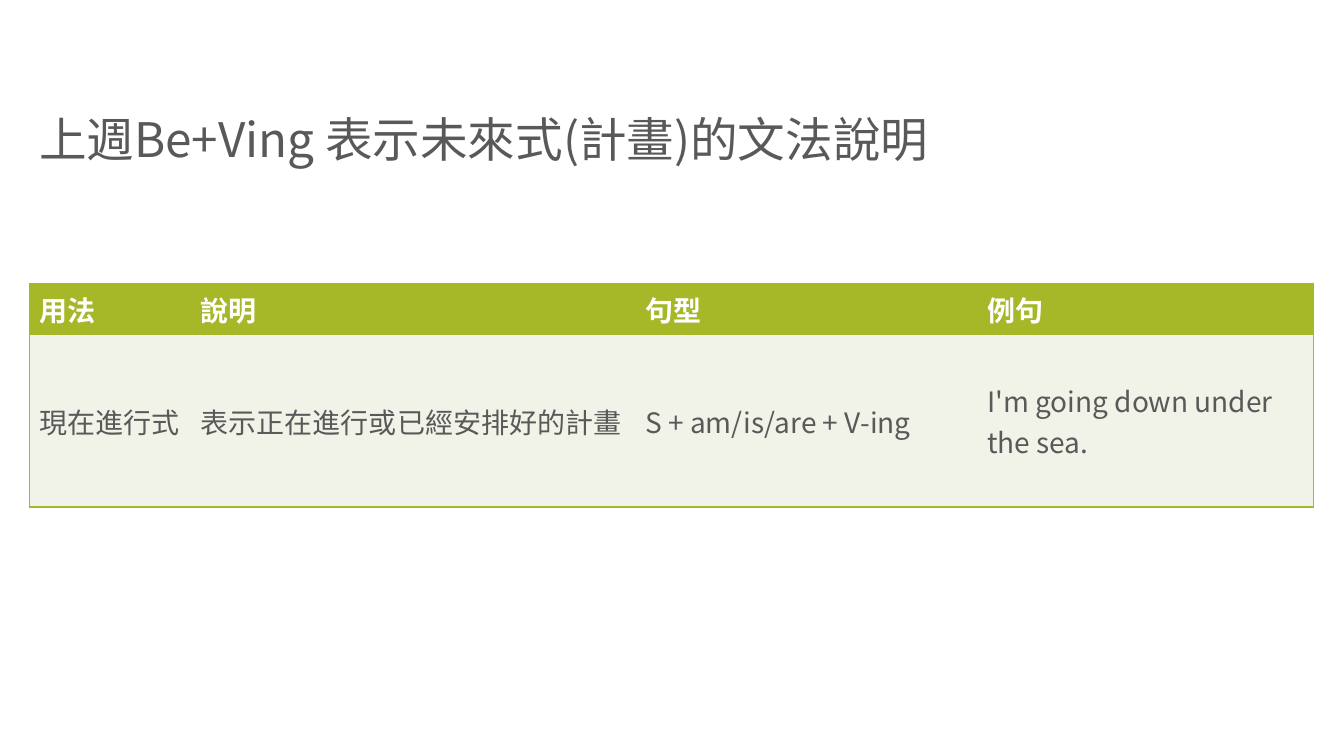
import pptx
import pptx.dml.color
import pptx.enum.text
import pptx.oxml
import pptx.oxml.ns
import pptx.util
from pptx.util import Inches

TITLE = "上週Be+Ving 表示未來式(計畫)的文法說明"
ROWS = [
    ["用法", "說明", "句型", "例句"],
    ["現在進行式", "表示正在進行或已經安排好的計畫", "S + am/is/are + V-ing", "I'm going down under the sea."],
]
COLUMN_WIDTHS = [1.6, 4.41, 3.39, 3.34]
ROW_HEIGHTS = [0.51, 1.71]
LEFT = 0.29
TABLE_TOP = 2.81
FONT = "Noto Sans CJK SC"
COLORS = {"green": "A6B727", "pale": "F1F3E8", "gray": "595959", "white": "FFFFFF"}


def color(name):
    return pptx.dml.color.RGBColor.from_string(COLORS[name])


def add_text(paragraph, text, size, color_name, bold=False):
    run = paragraph.add_run()
    run.text = text
    run.font.name = FONT
    run.font.size = pptx.util.Pt(size)
    run.font.bold = bold
    run.font.color.rgb = color(color_name)
    east_asian = pptx.oxml.parse_xml(f'<a:ea {pptx.oxml.ns.nsdecls("a")} typeface="{FONT}"/>')
    run.font._element.find(pptx.oxml.ns.qn("a:latin")).addnext(east_asian)


def set_borders(cell, visible_sides):
    properties = cell._tc.get_or_add_tcPr()
    for position, side in enumerate("LRTB"):
        if side in visible_sides:
            paint = f'<a:solidFill><a:srgbClr val="{COLORS["green"]}"/></a:solidFill>'
        else:
            paint = "<a:noFill/>"
        border = f'<a:ln{side} {pptx.oxml.ns.nsdecls("a")} w="12700">{paint}</a:ln{side}>'
        properties.insert(position, pptx.oxml.parse_xml(border))


def add_title(slide):
    title = slide.shapes.title
    title.left, title.top = Inches(LEFT), Inches(0.41)
    title.width, title.height = Inches(10.25), Inches(1.31)
    frame = title.text_frame
    frame.word_wrap = True
    frame.auto_size = pptx.enum.text.MSO_AUTO_SIZE.NONE
    frame.vertical_anchor = pptx.enum.text.MSO_ANCHOR.BOTTOM
    paragraph = frame.paragraphs[0]
    paragraph.alignment = pptx.enum.text.PP_ALIGN.LEFT
    paragraph.line_spacing = 0.9
    add_text(paragraph, TITLE, 34, "gray")


def add_grammar_table(slide):
    table = slide.shapes.add_table(
        len(ROWS), len(COLUMN_WIDTHS), Inches(LEFT), Inches(TABLE_TOP),
        Inches(sum(COLUMN_WIDTHS)), Inches(sum(ROW_HEIGHTS)),
    ).table
    for column, width in zip(table.columns, COLUMN_WIDTHS):
        column.width = Inches(width)
    for row, height in zip(table.rows, ROW_HEIGHTS):
        row.height = Inches(height)
    for row_index, texts in enumerate(ROWS):
        header = row_index == 0
        for column_index, text in enumerate(texts):
            cell = table.cell(row_index, column_index)
            cell.vertical_anchor = pptx.enum.text.MSO_ANCHOR.MIDDLE
            cell.fill.solid()
            cell.fill.fore_color.rgb = color("green" if header else "pale")
            sides = "TB"
            if column_index == 0:
                sides += "L"
            if column_index == len(texts) - 1:
                sides += "R"
            set_borders(cell, sides)
            add_text(cell.text_frame.paragraphs[0], text, 20, "white" if header else "gray", header)


def main():
    presentation = pptx.Presentation()
    presentation.slide_width = Inches(13.33)
    presentation.slide_height = Inches(7.5)
    slide = presentation.slides.add_slide(presentation.slide_layouts[5])
    slide.background.fill.solid()
    slide.background.fill.fore_color.rgb = color("white")
    add_title(slide)
    add_grammar_table(slide)
    presentation.save("out.pptx")


if __name__ == "__main__":
    main()
